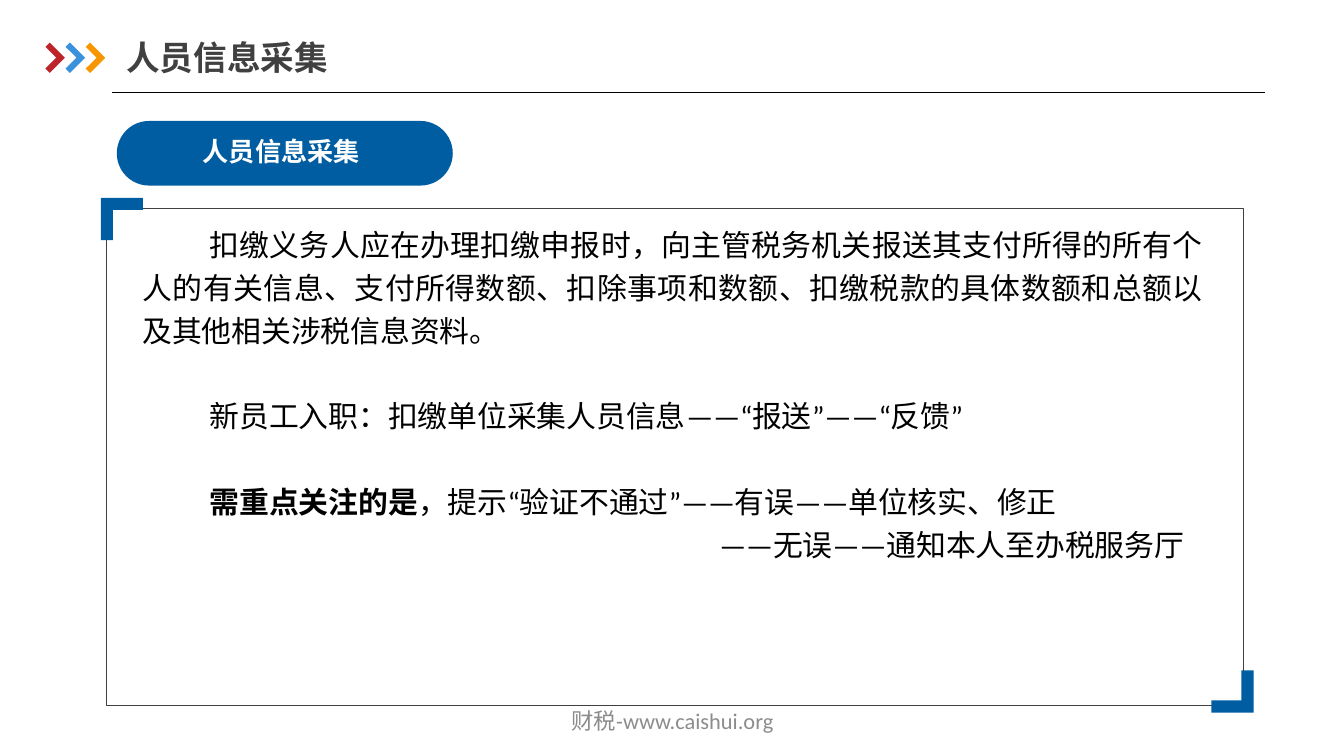
from dataclasses import dataclass

from lxml.etree import SubElement
from pptx import Presentation
from pptx.dml.color import RGBColor
from pptx.enum.lang import MSO_LANGUAGE_ID
from pptx.enum.shapes import MSO_CONNECTOR, MSO_SHAPE
from pptx.enum.text import MSO_ANCHOR, MSO_AUTO_SIZE, PP_ALIGN
from pptx.oxml.ns import qn
from pptx.util import Pt


@dataclass(frozen=True)
class Theme:
    blue: str = "005DA2"
    red: str = "BC242A"
    sky: str = "3992DB"
    amber: str = "F79600"
    dark: str = "404040"
    black: str = "000000"
    white: str = "FFFFFF"
    gray: str = "8C8C8C"
    head: str = "Noto Sans CJK SC"
    text: str = "Calibri"
    title: int = 18
    body: int = 16
    label: int = 14
    small: int = 12


class Deck:
    def __init__(self, slide, theme):
        self.slide = slide
        self.shapes = slide.shapes
        self.theme = theme

    def place(self, item, box):
        item.left, item.top, item.width, item.height = map(Pt, box)

    def frame(self, item, inset=(0, 0, 0, 0), anchor=MSO_ANCHOR.MIDDLE):
        frame = item.text_frame
        frame.auto_size = MSO_AUTO_SIZE.NONE
        frame.word_wrap = True
        frame.vertical_anchor = anchor
        (frame.margin_left, frame.margin_top,
         frame.margin_right, frame.margin_bottom) = map(Pt, inset)
        return frame

    def run(self, para, text, size, color, name, bold=False):
        """Add a run whose Latin and East Asian fonts are the same."""
        run = para.add_run()
        run.text = text
        font = run.font
        font.size, font.bold, font.name = Pt(size), bold, name
        font.color.rgb = RGBColor.from_string(color)
        font.language_id = MSO_LANGUAGE_ID.SIMPLIFIED_CHINESE
        SubElement(font._element, qn("a:ea"), typeface=name)

    def title(self, text, box):
        item = self.shapes.title
        self.place(item, box)
        para = self.frame(item, (0, 3.6, 0, 3.6)).paragraphs[0]
        para.alignment = PP_ALIGN.LEFT
        self.run(para, text, self.theme.title, self.theme.dark,
                 self.theme.head, True)

    def body(self, paras, box):
        """Fill the body from (margin, indent, space before, runs) rows."""
        item = self.slide.placeholders[1]
        self.place(item, box)
        frame = self.frame(item, anchor=MSO_ANCHOR.TOP)
        for i, (margin, indent, gap, runs) in enumerate(paras):
            para = frame.paragraphs[0] if i == 0 else frame.add_paragraph()
            para.alignment = PP_ALIGN.JUSTIFY
            para.line_spacing = 1.2
            para.space_before = Pt(gap)
            props = para._p.get_or_add_pPr()
            props.set("marL", str(Pt(margin)))
            props.set("indent", str(Pt(indent)))
            SubElement(props, qn("a:buNone"))
            for text, bold in runs:
                self.run(para, text, self.theme.body, self.theme.black,
                         self.theme.text, bold)

    def paint(self, item, fill=None, line=None, width=0.25):
        item.shadow.inherit = False
        if fill:
            item.fill.solid()
            item.fill.fore_color.rgb = RGBColor.from_string(fill)
        else:
            item.fill.background()
        if line:
            item.line.color.rgb = RGBColor.from_string(line)
            item.line.width = Pt(width)
        else:
            item.line.fill.background()
        return item

    def shape(self, kind, box, fill=None, line=None):
        item = self.shapes.add_shape(kind, *map(Pt, box))
        return self.paint(item, fill, line)

    def arrow(self, box, fill):
        """Draw the preset "corner", which MSO_SHAPE lacks, pointing right."""
        item = self.shape(MSO_SHAPE.RECTANGLE, box, fill)
        item.rotation = 225
        geom = item._element.spPr.find(qn("a:prstGeom"))
        geom.set("prst", "corner")
        guides = geom.find(qn("a:avLst"))
        for name, value in (("adj1", 28000), ("adj2", 29000)):
            SubElement(guides, qn("a:gd"), name=name, fmla=f"val {value}")

    def pill(self, text, box):
        item = self.shape(MSO_SHAPE.ROUNDED_RECTANGLE, box, self.theme.blue)
        item.adjustments[0] = 0.5
        para = self.frame(item, (0, 0, 3.6, 0)).paragraphs[0]
        para.alignment = PP_ALIGN.CENTER
        para.line_spacing = 0.9
        self.run(para, text, self.theme.label, self.theme.white,
                 self.theme.head, True)

    def rule(self, left, right, top):
        line = self.shapes.add_connector(
            MSO_CONNECTOR.STRAIGHT, Pt(left), Pt(top), Pt(right), Pt(top))
        line.line.color.rgb = RGBColor.from_string(self.theme.black)
        line.line.width = Pt(0.75)
        SubElement(line._element.spPr, qn("a:effectLst"))

    def bracket(self, x, y, way):
        """Draw an L with its outer corner at x, y; way 1 opens down right."""
        arm, thick = 22.6 * way, 6.5 * way
        steps = [(arm, 0), (arm, thick), (thick, thick), (thick, arm), (0, arm)]
        path = self.shapes.build_freeform(Pt(x), Pt(y))
        path.add_line_segments([(Pt(x + dx), Pt(y + dy)) for dx, dy in steps])
        self.paint(path.convert_to_shape(), self.theme.blue)

    def footer(self, text, box):
        item = self.shapes.add_textbox(*map(Pt, box))
        para = self.frame(item, (7.2, 3.6, 7.2, 3.6)).paragraphs[0]
        para.alignment = PP_ALIGN.CENTER
        self.run(para, text, self.theme.small, self.theme.gray, self.theme.text)


def main():
    show = Presentation()
    show.slide_width, show.slide_height = Pt(720), Pt(405)
    theme = Theme()
    deck = Deck(show.slides.add_slide(show.slide_layouts[1]), theme)

    deck.title("人员信息采集", (67.7, 15.8, 417.6, 29.5))
    for i, color in enumerate((theme.red, theme.sky, theme.amber)):
        deck.arrow((20.9 + 10.8 * i, 25.2, 11.5, 11.5), color)
    deck.rule(60, 677.5, 49.7)
    deck.pill("人员信息采集", (62.6, 64.8, 180, 34.6))

    deck.shape(MSO_SHAPE.RECTANGLE, (57, 111.6, 609.1, 266.4), line=theme.dark)
    deck.body([
        (0, 36, 0, [("扣缴义务人应在办理扣缴申报时，向主管税务机关报送其支付所得的所有个人的有关信息、"
                     "支付所得数额、扣除事项和数额、扣缴税款的具体数额和总额以及其他相关涉税信息资料。",
                     False)]),
        (0, 36, 23, [("新员工入职：扣缴单位采集人员信息——“报送”——“反馈”", False)]),
        (0, 36, 23, [("需重点关注的是", True),
                     ("，提示“验证不通过”——有误——单位核实、修正", False)]),
        (309, 0, 0, [("——无误——通知本人至办税服务厅", False)]),
    ], (76.3, 117.4, 568.8, 185.8))
    deck.bracket(54, 106, 1)
    deck.bracket(671.6, 381.8, -1)
    deck.footer("财税-www.caishui.org", (246.2, 375.1, 228.2, 21.6))

    show.save("out.pptx")


if __name__ == "__main__":
    main()
